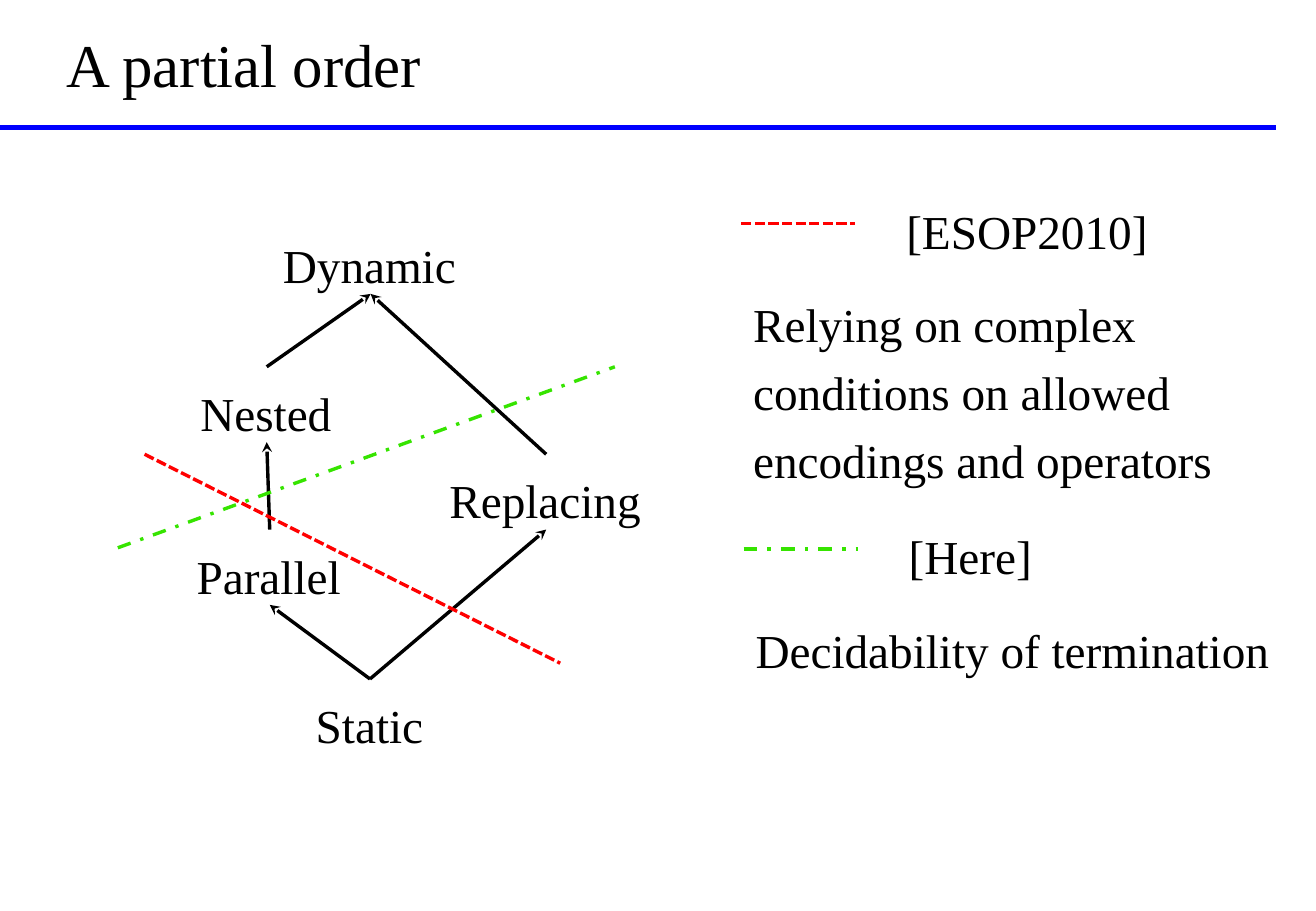
from lxml import etree
from pptx import Presentation
from pptx.dml.color import RGBColor
from pptx.enum.dml import MSO_LINE
from pptx.enum.shapes import MSO_CONNECTOR
from pptx.enum.text import MSO_ANCHOR, MSO_AUTO_SIZE, PP_ALIGN
from pptx.oxml.ns import qn
from pptx.util import Inches, Pt

STRAIGHT = MSO_CONNECTOR.STRAIGHT
SHORT_DASH, DASH_DOT = MSO_LINE.SQUARE_DOT, MSO_LINE.DASH_DOT
TOP, BOTTOM, LEFT = MSO_ANCHOR.TOP, MSO_ANCHOR.BOTTOM, PP_ALIGN.LEFT
GROW, FIXED = MSO_AUTO_SIZE.SHAPE_TO_FIT_TEXT, MSO_AUTO_SIZE.NONE

FONT = "Times New Roman"
BLACK, BLUE, RED, GREEN = "000000", "0000FF", "FF0000", "36E400"
LABEL_HEIGHT = 0.62

# Diagram labels: left, top, width within the diagram box
NODES = {
    "Dynamic": (1.26, 0, 1.64),
    "Replacing": (2.63, 1.94, 1.79),
    "Nested": (0.58, 1.22, 1.29),
    "Parallel": (0.55, 2.56, 1.4),
    "Static": (1.53, 3.79, 1.09),
}
# Each arrow rises from the lower node to the higher one
ORDER = [("Static", "Replacing"), ("Replacing", "Dynamic"), ("Nested", "Dynamic"),
         ("Static", "Parallel"), ("Parallel", "Nested")]


def color(value):
    return RGBColor.from_string(value)


def add_line(slide, start, end, line_color, width=2, dash=None, arrow=False):
    points = [Inches(value) for value in (*start, *end)]
    connector = slide.shapes.add_connector(STRAIGHT, *points)
    connector.line.color.rgb = color(line_color)
    connector.line.width = Pt(width)
    if dash is not None:
        connector.line.dash_style = dash
    properties = connector._element.spPr
    if arrow:
        etree.SubElement(properties.find(qn("a:ln")), qn("a:tailEnd"), type="stealth")
    etree.SubElement(properties, qn("a:effectLst"))


def format_text(shape, text, size):
    shape.text_frame.text = text
    paragraph = shape.text_frame.paragraphs[0]
    paragraph.alignment = LEFT
    font = paragraph.runs[0].font
    font.name, font.size = FONT, Pt(size)
    font.color.rgb = color(BLACK)
    return paragraph


def add_label(slide, text, left, top, width, height=LABEL_HEIGHT, wrap=False):
    box = slide.shapes.add_textbox(*[Inches(v) for v in (left, top, width, height)])
    paragraph = format_text(box, text, 28)
    paragraph.line_spacing = 1.2
    paragraph.space_before = Pt(3)
    frame = box.text_frame
    frame.word_wrap, frame.auto_size, frame.vertical_anchor = wrap, GROW, TOP


def add_heading(slide, text, left, top, width, height):
    title = slide.shapes.title
    title.left, title.top = Inches(left), Inches(top)
    title.width, title.height = Inches(width), Inches(height)
    format_text(title, text, 36)
    title.text_frame.vertical_anchor = BOTTOM
    title.text_frame.auto_size = FIXED
    add_line(slide, (0, 1.05), (10.5, 1.05), BLUE, width=3)


def add_diagram(slide, left, top):
    # Nodes
    for name, (x, y, width) in NODES.items():
        add_label(slide, name, left + x, top + y, width)

    # Arrows from the top of a node to the bottom of the next
    def anchor(name, offset):
        x, y, width = NODES[name]
        return left + x + width / 2, top + y + offset

    for lower, upper in ORDER:
        add_line(slide, anchor(lower, 0), anchor(upper, LABEL_HEIGHT), BLACK, arrow=True)

    # Boundaries across the order
    add_line(slide, (left + 0.22, top + 1.94), (left + 3.64, top + 3.66), RED, dash=SHORT_DASH)
    add_line(slide, (left, top + 2.71), (left + 4.09, top + 1.22), GREEN, dash=DASH_DOT)


def add_legend_entry(slide, left, top, line_color, dash, name, name_width,
                     description, width, height):
    key_y = top + 0.32
    add_line(slide, (left, key_y), (left + 0.94, key_y), line_color, dash=dash)
    add_label(slide, name, left + 1.26, top, name_width)
    add_label(slide, description, left, top + 0.77, width, height, wrap=True)


def main():
    presentation = Presentation()
    presentation.slide_width, presentation.slide_height = Inches(10.83), Inches(7.5)
    slide = presentation.slides.add_slide(presentation.slide_layouts[5])
    add_heading(slide, "A partial order", 0.45, 0.18, 9.84, 0.69)
    add_diagram(slide, 0.97, 1.8)
    add_legend_entry(slide, 6.1, 1.52, RED, SHORT_DASH, "[ESOP2010]", 2.21,
                     "Relying on complex conditions on allowed encodings and operators",
                     4.11, 1.8)
    add_legend_entry(slide, 6.12, 4.2, GREEN, DASH_DOT, "[Here]", 1.23,
                     "Decidability of termination", 4.43, 0.67)
    presentation.save("out.pptx")


if __name__ == "__main__":
    main()
